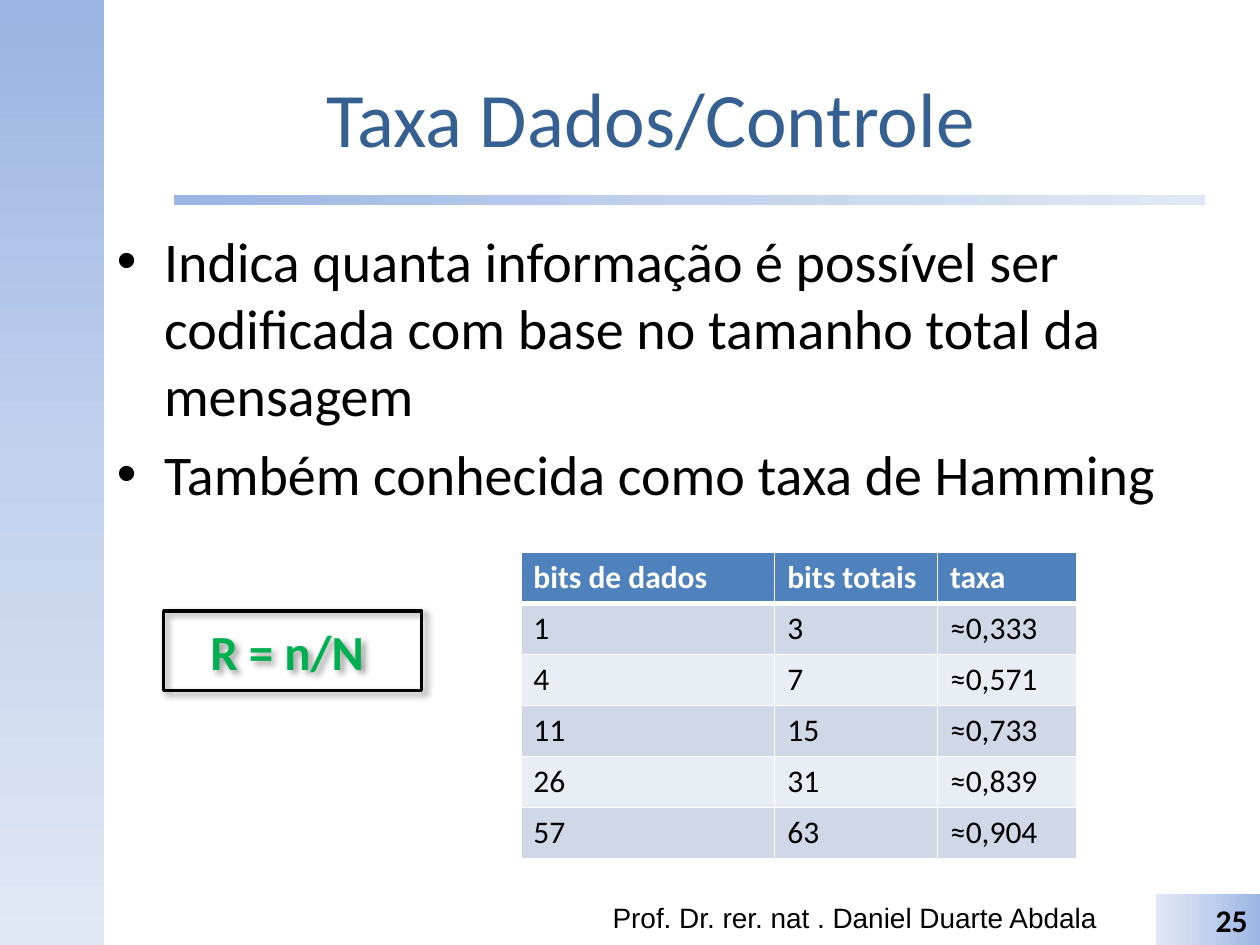
from copy import deepcopy

from pptx import Presentation
from pptx.dml.color import RGBColor
from pptx.enum.shapes import MSO_SHAPE as Preset
from pptx.enum.text import MSO_ANCHOR as Anchor, MSO_AUTO_SIZE as AutoSize, PP_ALIGN as Align
from pptx.oxml import parse_xml
from pptx.oxml.ns import nsdecls, qn
from pptx.util import Cm, Pt

BLUES = {0: "9AB5E4", 0.5: "C2D1ED", 1: "E1E8F5"}
BULLETS = [
    "Indica quanta informação é possível ser codificada com base no tamanho total da mensagem",
    "Também conhecida como taxa de Hamming",
]
RATES = [
    ("bits de dados", "bits totais", "taxa"),
    ("1", "3", "≈0,333"),
    ("4", "7", "≈0,571"),
    ("11", "15", "≈0,733"),
    ("26", "31", "≈0,839"),
    ("57", "63", "≈0,904"),
]


def color(hex_value):
    return RGBColor.from_string(hex_value)


def place(shape, box):
    shape.left, shape.top, shape.width, shape.height = (Cm(value) for value in box)


def write(frame, *texts, size=18, font="Calibri", ink="000000", bold=False,
          align=None, anchor=None):
    """Put one paragraph per text into the frame, all in one format."""
    frame.word_wrap = True
    if anchor is not None:
        frame.vertical_anchor = anchor
    for index, text in enumerate(texts):
        paragraph = frame.add_paragraph() if index else frame.paragraphs[0]
        paragraph.alignment = align
        run = paragraph.add_run()
        run.text = text
        run.font.name, run.font.size, run.font.bold = font, Pt(size), bold
        run.font.color.rgb = color(ink)


def add_gradient_band(slide, box, angle, preset=Preset.RECTANGLE):
    """Add a borderless blue band; the angle runs clockwise."""
    band = slide.shapes.add_shape(preset, *(Cm(value) for value in box))
    band.shadow.inherit = False
    band.line.fill.background()
    band.fill.gradient()
    band.fill.gradient_angle = 360 - angle
    stop_list = band._element.spPr.find(qn("a:gradFill")).find(qn("a:gsLst"))
    stop_list.insert(1, deepcopy(stop_list[0]))
    for stop, (position, hex_value) in zip(band.fill.gradient_stops, BLUES.items()):
        stop.position = position
        stop.color.rgb = color(hex_value)
    return band


def add_frame(slide, box):
    """Add the side band, the title rule and the footer."""
    left, top, width, height = box
    side_width, footer_height = 2.1, 1.02
    footer_top = top + height - footer_height
    add_gradient_band(slide, (left, top, side_width, height), 90)
    add_gradient_band(slide, (left + 3.5, top + 3.93, 20.8, 0.2), 0, Preset.ROUNDED_RECTANGLE)
    author = slide.shapes.add_textbox(0, 0, 0, 0)
    place(author, (left + 12.1, footer_top, 10.64, footer_height))
    write(author.text_frame, "Prof. Dr. rer. nat . Daniel Duarte Abdala", size=16, font="Arial")
    number_box = (left + width - side_width, footer_top, side_width, footer_height)
    number = add_gradient_band(slide, number_box, 180)
    write(number.text_frame, "25", bold=True, align=Align.RIGHT, anchor=Anchor.TOP)


def fill_placeholders(slide, box):
    left, top, width, height = box
    title, body = slide.shapes.title, slide.placeholders[1]
    place(title, (left, top, width, 3.18))
    place(body, (left, top + 3.68, width, height - 3.68))
    for placeholder in (title, body):
        placeholder.text_frame.auto_size = AutoSize.NONE
    write(title.text_frame, "Taxa Dados/Controle", size=44, ink="376092",
          align=Align.CENTER, anchor=Anchor.MIDDLE)
    write(body.text_frame, *BULLETS, size=32)


def set_borders(cell, bottom):
    """Draw white cell borders, 1 pt except for the bottom one."""
    properties = cell._tc.get_or_add_tcPr()
    for index, (side, points) in enumerate({"L": 1, "R": 1, "T": 1, "B": bottom}.items()):
        properties.insert(index, parse_xml(
            f'<a:ln{side} {nsdecls("a")} w="{Pt(points)}"><a:solidFill>'
            f'<a:srgbClr val="FFFFFF"/></a:solidFill></a:ln{side}>'))


def add_rate_table(slide, box):
    left, top, width, height = (Cm(value) for value in box)
    table = slide.shapes.add_table(len(RATES), len(RATES[0]), left, top, width, height).table
    for column, share in zip(table.columns, (0.457, 0.293, 0.25)):
        column.width = round(width * share)
    for row, texts in enumerate(RATES):
        header = row == 0
        fill = "4F81BD" if header else ("E9EDF4", "D0D8E8")[row % 2]
        for column, text in enumerate(texts):
            cell = table.cell(row, column)
            cell.fill.solid()
            cell.fill.fore_color.rgb = color(fill)
            set_borders(cell, bottom=3 if header else 1)
            write(cell.text_frame, text, ink="FFFFFF" if header else "000000", bold=header)


def add_formula(slide, box):
    formula = slide.shapes.add_shape(Preset.RECTANGLE, *(Cm(value) for value in box))
    formula.fill.background()
    formula.line.color.rgb = color("000000")
    formula.line.width = Pt(2)
    formula._element.spPr.append(parse_xml(
        f'<a:effectLst {nsdecls("a")}><a:outerShdw blurRad="{Pt(4)}" dist="{Pt(3)}" '
        'dir="2700000" algn="tl" rotWithShape="0"><a:srgbClr val="000000">'
        '<a:alpha val="40000"/></a:srgbClr></a:outerShdw></a:effectLst>'))
    write(formula.text_frame, "R = n/N ", size=28, ink="00B050", bold=True,
          align=Align.CENTER, anchor=Anchor.MIDDLE)


def main():
    presentation = Presentation()
    presentation.slide_width, presentation.slide_height = Cm(25.4), Cm(19.05)
    slide = presentation.slides.add_slide(presentation.slide_layouts[1])
    add_frame(slide, (0, 0, 25.4, 19.05))
    fill_placeholders(slide, (2.1, 0.76, 22.03, 16.26))
    add_rate_table(slide, (10.5, 11.13, 11.2, 6.18))
    add_formula(slide, (3.3, 12.32, 5.2, 1.6))
    presentation.save("out.pptx")


if __name__ == "__main__":
    main()
